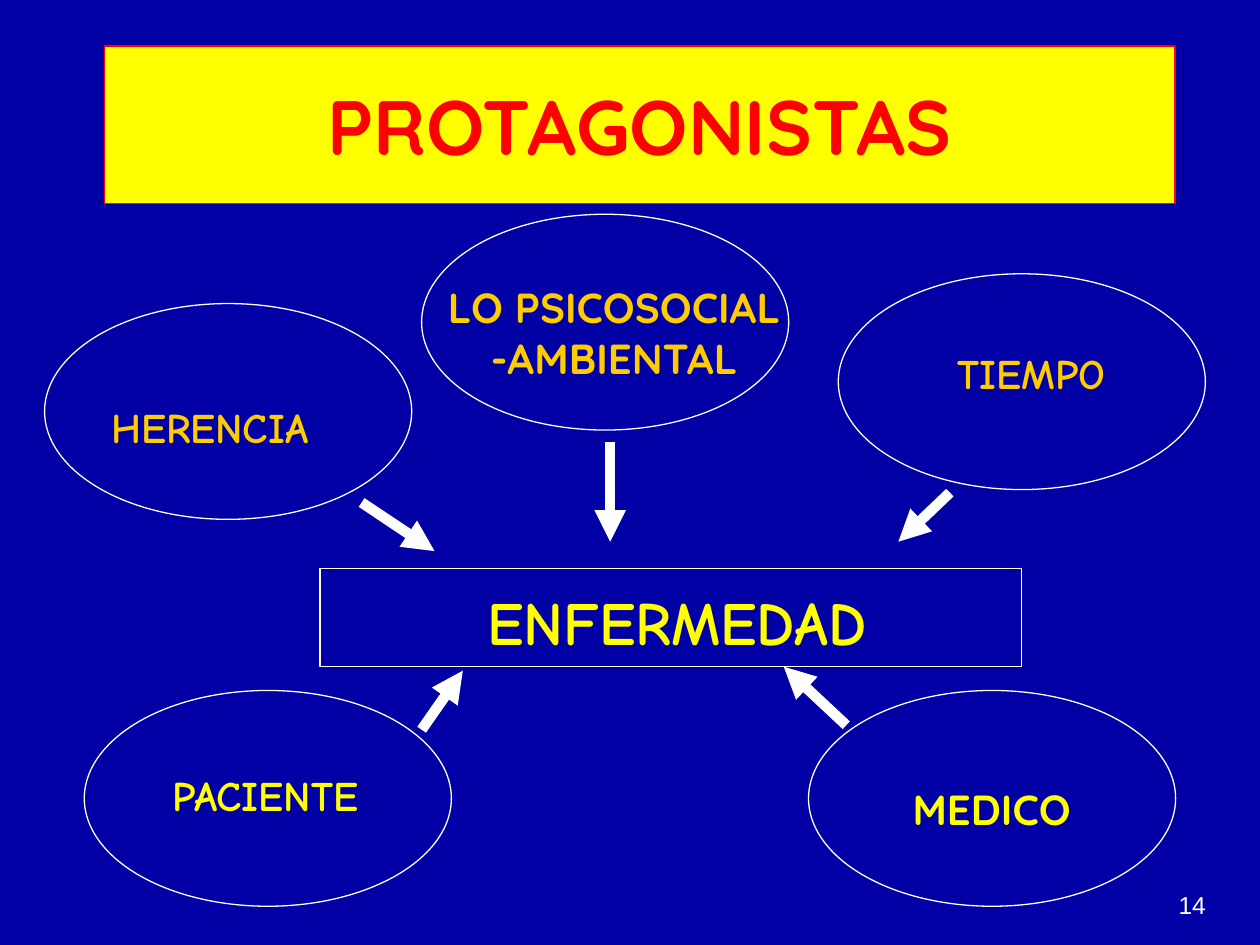
from lxml.etree import SubElement as Sub
from pptx import Presentation
from pptx.dml.color import RGBColor as RGB
from pptx.enum.shapes import MSO_CONNECTOR as Conn, MSO_SHAPE as Form
from pptx.enum.text import MSO_ANCHOR as Anchor, PP_ALIGN as Align
from pptx.oxml.ns import qn
from pptx.util import Cm, Pt

THEME = {
    "back": RGB(0x00, 0x00, 0xA4),
    "white": RGB(0xFF, 0xFF, 0xFF),
    "yellow": RGB(0xFF, 0xFF, 0x00),
    "gold": RGB(0xFF, 0xCC, 0x00),
    "red": RGB(0xFF, 0x00, 0x00),
    "hand": "Comic Neue", "round": "Quicksand", "plain": "Arial",
    "title": 44, "core": 35, "label": 24, "page": 14,
    "thin": 0.75, "thick": 6,
}

# All places are in centimetres: left, top, width, height
TITLE = ("PROTAGONISTAS", (2.1, 0.93, 21.59, 3.18))
CORE = ("ENFERMEDAD", (6.65, 11.66, 14, 1.73))
FRAME = (6.45, 11.46, 14.15, 1.98)
PAGE = ("14", (18.21, 17.35, 6.35, 1.32))
OVAL = (7.4, 4.35)

# Lines, font, colour, corner of the oval, centre of the label,
# arrow start, arrow tip
ACTORS = [
    (["HERENCIA"], "hand", "gold", (0.9, 6.12), (4.23, 8.6),
     (7.29, 10.13), (8.76, 11.11)),
    (["LO PSICOSOCIAL", "-AMBIENTAL"], "round", "gold", (8.5, 4.32),
     (12.38, 6.7), (12.3, 8.92), (12.3, 10.92)),
    (["TIEMPO"], "hand", "gold", (16.9, 5.52), (20.8, 7.52),
     (19.15, 9.93), (18.11, 10.92)),
    (["PACIENTE"], "hand", "yellow", (1.7, 13.92), (5.35, 16.02),
     (8.5, 14.71), (9.33, 13.52)),
    (["MEDICO"], "round", "yellow", (16.3, 13.92), (19.99, 16.31),
     (17.06, 14.62), (15.8, 13.44)),
]
LABEL = (7.6, 3.15)


def cms(*nums):
    return [Cm(n) for n in nums]


def write(frame, lines, face, size, hue, align=Align.CENTER, bold=True):
    for i, line in enumerate(lines):
        para = frame.paragraphs[0] if i == 0 else frame.add_paragraph()
        para.alignment = align
        run = para.add_run()
        run.text = line
        font = run.font
        font.name, font.size, font.bold = THEME[face], Pt(THEME[size]), bold
        font.color.rgb = THEME[hue]


def add_text(slide, box, anchor, wrap=True):
    frame = slide.shapes.add_textbox(*cms(*box)).text_frame
    frame.word_wrap = wrap
    frame.vertical_anchor = anchor
    return frame


def add_outline(slide, form, box):
    shape = slide.shapes.add_shape(form, *cms(*box))
    shape.shadow.inherit = False
    shape.fill.background()
    shape.line.color.rgb = THEME["white"]
    shape.line.width = Pt(THEME["thin"])


def add_arrow(slide, start, tip):
    arrow = slide.shapes.add_connector(Conn.STRAIGHT, *cms(*start, *tip))
    arrow.line.color.rgb = THEME["white"]
    arrow.line.width = Pt(THEME["thick"])
    Sub(arrow.line._get_or_add_ln(), qn("a:tailEnd"), type="triangle")
    Sub(arrow._element.spPr, qn("a:effectLst"))


def add_title(slide):
    text, box = TITLE
    title = slide.shapes.title
    title.left, title.top, title.width, title.height = cms(*box)
    title.fill.solid()
    title.fill.fore_color.rgb = THEME["yellow"]
    title.line.color.rgb = THEME["red"]
    title.line.width = Pt(THEME["thin"])
    title.text_frame.vertical_anchor = Anchor.MIDDLE
    write(title.text_frame, [text], "round", "title", "red")


def main():
    deck = Presentation()
    deck.slide_width, deck.slide_height = cms(25.4, 19.05)
    slide = deck.slides.add_slide(deck.slide_layouts[5])
    slide.background.fill.solid()
    slide.background.fill.fore_color.rgb = THEME["back"]

    add_title(slide)
    add_outline(slide, Form.RECTANGLE, FRAME)
    text, box = CORE
    write(add_text(slide, box, Anchor.TOP), [text], "hand", "core", "yellow")

    wide, high = LABEL
    for lines, face, hue, spot, (x, y), start, tip in ACTORS:
        add_outline(slide, Form.OVAL, (*spot, *OVAL))
        box = (x - wide / 2, y - high / 2, wide, high)
        frame = add_text(slide, box, Anchor.MIDDLE, wrap=False)
        write(frame, lines, face, "label", hue)
        add_arrow(slide, start, tip)

    text, box = PAGE
    write(add_text(slide, box, Anchor.BOTTOM), [text], "plain", "page",
          "white", Align.RIGHT, bold=False)
    deck.save("out.pptx")


if __name__ == "__main__":
    main()
